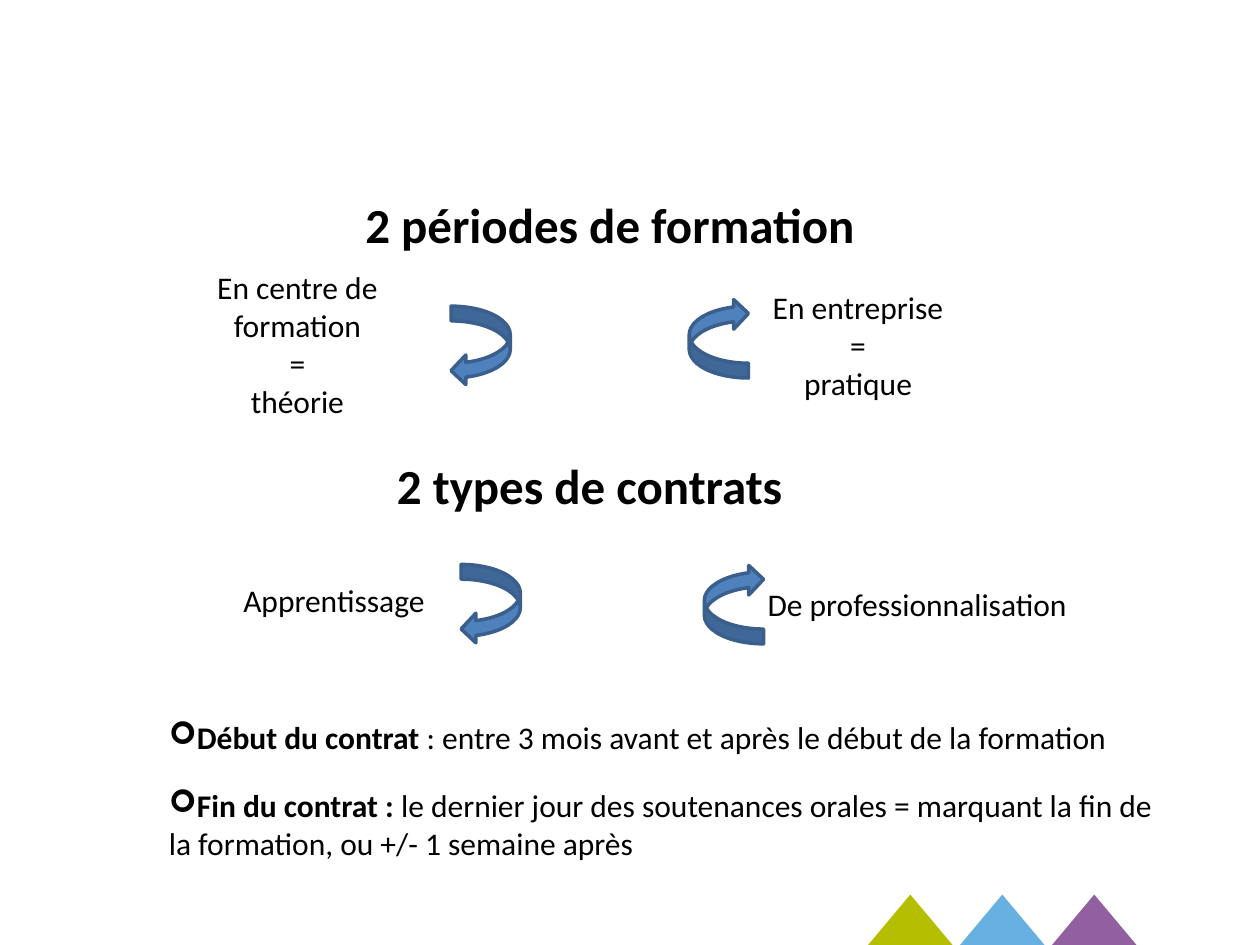
from lxml.etree import SubElement
from pptx import Presentation
from pptx.dml.color import RGBColor
from pptx.enum.shapes import MSO_SHAPE as Shape
from pptx.enum.text import MSO_ANCHOR as Anchor, MSO_AUTO_SIZE as AutoSize, PP_ALIGN as Align
from pptx.oxml.ns import qn
from pptx.util import Inches, Pt

BLACK = RGBColor(0x00, 0x00, 0x00)
BLUE = RGBColor(0x4F, 0x81, 0xBD)
DARK_BLUE = RGBColor(0x3A, 0x5F, 0x8C)
GREEN = RGBColor(0xB5, 0xBE, 0x00)
SKY = RGBColor(0x67, 0xB0, 0xE2)
PURPLE = RGBColor(0x92, 0x60, 0xA0)
FONT = "Calibri"

# Content: boxes are left, top, width, height in inches
TITLE = ("2 périodes de formation", (0.59, 0.99, 8.5, 2.05))
SUBTITLE = ("2 types de contrats", (0.43, 3.06, 8.5, 2.05))
LABELS = [
    (["En centre de formation", "=", "théorie"], (1.1, 2.08, 2.52, 1.31)),
    (["En entreprise", "=", "pratique"], (5.63, 2.24, 2.36, 1.01)),
    (["Apprentissage"], (1.39, 4.56, 2.52, 0.4)),
    (["De professionnalisation"], (5.86, 4.59, 2.84, 0.4)),
]
ARROWS = [(3.58, 2.43, 0), (5.47, 2.37, 180), (3.66, 4.48, 0), (5.59, 4.48, 180)]
ARROW_SIZE = (0.47, 0.63)
DATES = [
    ("Début du contrat ", ": entre 3 mois avant et après le début de la formation"),
    ("Fin du contrat : ", "le dernier jour des soutenances orales = marquant la fin de "
     "la formation, ou +/- 1 semaine après"),
]
DATES_BOX = (1.24, 5.65, 8.19, 1.25)
TRIANGLE_COLOURS = [GREEN, SKY, PURPLE]
TRIANGLE_BOX, TRIANGLE_STEP = (6.89, 7.1, 0.67, 0.4), 0.73


def place(shape, box):
    shape.left, shape.top, shape.width, shape.height = map(Inches, box)


def style(para, size, bold=None):
    font = para.font
    font.name, font.size, font.bold = FONT, Pt(size), bold
    font.color.rgb = BLACK


def add_lines(frame, lines, size, bold=None):
    frame.word_wrap = True
    frame.text = "\n".join(lines)
    for para in frame.paragraphs:
        para.alignment = Align.CENTER
        style(para, size, bold)


def format_heading(shape, text, box):
    place(shape, box)
    frame = shape.text_frame
    frame.auto_size = AutoSize.NONE
    frame.vertical_anchor = Anchor.MIDDLE
    frame.margin_bottom = Inches(0.52)  # lifts the line above the box centre
    add_lines(frame, [text], 28, True)


def add_filled(page, kind, box, fill):
    shape = page.shapes.add_shape(kind, *map(Inches, box))
    shape.shadow.inherit = False
    shape.fill.solid()
    shape.fill.fore_color.rgb = fill
    return shape


def add_bullet(para, char):
    props = para._p.get_or_add_pPr()
    props.set("marL", "0")
    props.set("indent", "0")
    SubElement(props, qn("a:buFont"), typeface="Wingdings")
    SubElement(props, qn("a:buChar"), char=char)


deck = Presentation()
deck.slide_width, deck.slide_height = Inches(10), Inches(7.5)
page = deck.slides.add_slide(deck.slide_layouts[1])
title, body = page.placeholders

# Footer triangles
left, *rest = TRIANGLE_BOX
for index, colour in enumerate(TRIANGLE_COLOURS):
    box = (left + index * TRIANGLE_STEP, *rest)
    add_filled(page, Shape.ISOSCELES_TRIANGLE, box, colour).line.fill.background()

# Headings
format_heading(title, *TITLE)
format_heading(page.shapes.add_textbox(0, 0, 0, 0), *SUBTITLE)

# Curved arrows
for left, top, turn in ARROWS:
    arrow = add_filled(page, Shape.CURVED_LEFT_ARROW, (left, top, *ARROW_SIZE), BLUE)
    arrow.rotation = turn
    arrow.line.color.rgb = DARK_BLUE
    arrow.line.width = Pt(2)

# Labels beside the arrows
for lines, box in LABELS:
    label = page.shapes.add_textbox(*map(Inches, box))
    add_lines(label.text_frame, lines, 18)

# Contract dates
place(body, DATES_BOX)
frame = body.text_frame
frame.auto_size = AutoSize.NONE
for index, (term, detail) in enumerate(DATES):
    para = frame.add_paragraph() if index else frame.paragraphs[0]
    para.space_before = Pt(17 if index else 0)
    add_bullet(para, "➢")
    style(para, 18)
    for text, bold in ((term, True), (detail, False)):
        span = para.add_run()
        span.text, span.font.bold = text, bold

deck.save("out.pptx")
